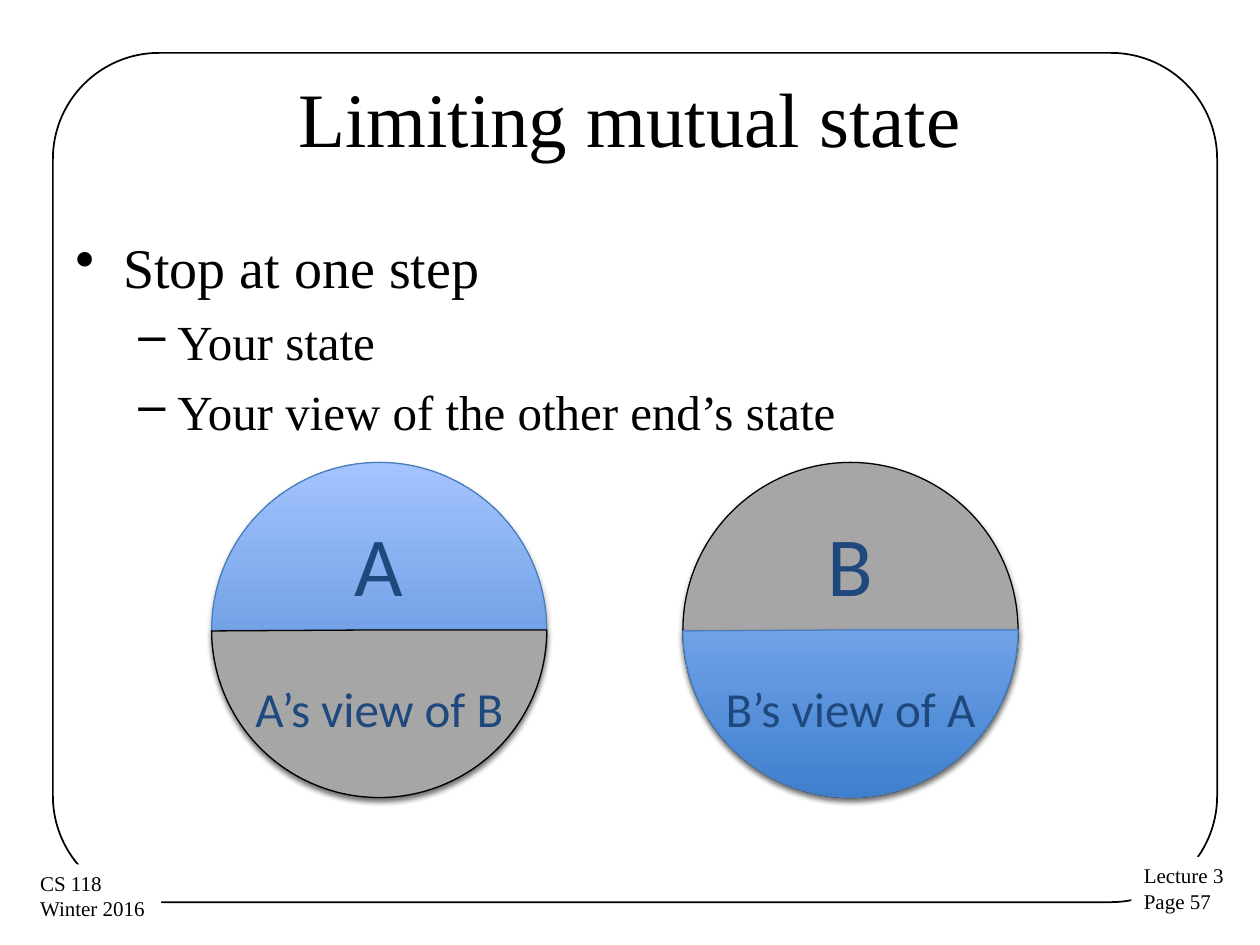
from dataclasses import dataclass

from lxml import etree
from pptx import Presentation
from pptx import util as u
from pptx.dml.color import RGBColor
from pptx.enum import shapes, text
from pptx.oxml import ns


@dataclass(frozen=True)
class Theme:
    """Colours, fonts and type sizes of the deck."""

    black: str = "000000"
    white: str = "FFFFFF"
    grey: str = "A6A6A6"
    navy: str = "1F497D"
    blue_line: str = "4B7EBC"
    blue_gradient: tuple = ("3F80CE", "A4C4FF")
    serif: str = "Times New Roman"
    sans: str = "Calibri"
    title: int = 44
    bullets: tuple = (32, 28)
    letter: int = 48
    view: int = 28
    footer: int = 12


class SlideBuilder:
    """Adds styled elements to the current slide."""

    def __init__(self, slide, theme):
        self.slide = slide
        self.theme = theme

    def format_font(self, paragraph, size, name, color):
        """Set the size, typeface and colour of a paragraph."""
        values = {"size": u.Pt(size), "name": name, "bold": False}
        for key, value in values.items():
            setattr(paragraph.font, key, value)
        paragraph.font.color.rgb = RGBColor.from_string(color)

    def format_frame(self, frame, **values):
        """Apply format values to a text frame."""
        for key, value in values.items():
            setattr(frame, key, value)

    def title(self, wording):
        """Place and format the title placeholder."""
        title = self.slide.shapes.title
        box = {"left": 0.5, "top": 0.3, "width": 9, "height": 1.25}
        for key, value in box.items():
            setattr(title, key, u.Inches(value))
        title.text_frame.text = wording
        self.format_frame(title.text_frame, vertical_anchor=text.MSO_ANCHOR.MIDDLE)
        paragraph = title.text_frame.paragraphs[0]
        paragraph.alignment = text.PP_ALIGN.CENTER
        self.format_font(paragraph, self.theme.title, self.theme.serif, self.theme.black)

    def shape(self, kind, box, fill=None, line=None, width=0.75):
        """Add a preset shape with a plain, gradient or empty fill."""
        shape = self.slide.shapes.add_shape(kind, *map(u.Inches, box))
        shape.shadow.inherit = False
        if fill is None:
            shape.fill.background()
        elif isinstance(fill, tuple):
            shape.fill.gradient()
            shape.fill.gradient_angle = 90
            for stop, color in zip(shape.fill.gradient_stops, fill):
                stop.color.rgb = RGBColor.from_string(color)
        else:
            shape.fill.solid()
            shape.fill.fore_color.rgb = RGBColor.from_string(fill)
        if line is None:
            shape.line.fill.background()
        else:
            shape.line.color.rgb = RGBColor.from_string(line)
            shape.line.width = u.Pt(width)
        return shape

    def frame(self, box):
        """Add the rounded frame around the slide."""
        frame = self.shape(
            shapes.MSO_SHAPE.ROUNDED_RECTANGLE, box, line=self.theme.black, width=1
        )
        frame.adjustments[0] = 0.125

    def footer(self, box, lines):
        """Add a white corner label."""
        label = self.shape(shapes.MSO_SHAPE.RECTANGLE, box, self.theme.white)
        label.text_frame.text = "\n".join(lines)
        self.format_frame(
            label.text_frame, word_wrap=False, vertical_anchor=text.MSO_ANCHOR.TOP
        )
        for paragraph in label.text_frame.paragraphs:
            paragraph.alignment = text.PP_ALIGN.LEFT
            self.format_font(
                paragraph, self.theme.footer, self.theme.serif, self.theme.black
            )

    def bullets(self, box, items):
        """Add a two-level bullet list."""
        frame = self.slide.shapes.add_textbox(*map(u.Inches, box)).text_frame
        frame.word_wrap = True
        frame.text = "\n".join(wording for _, wording in items)
        styles = (("•", 0.38, 0.38), ("–", 0.81, 0.31))
        for index, (level, _) in enumerate(items):
            paragraph = frame.paragraphs[index]
            mark, margin, hanging = styles[level]
            paragraph.level = level
            paragraph.space_before = u.Pt(6.5 if index else 0)
            properties = paragraph._p.get_or_add_pPr()
            properties.set("marL", str(u.Inches(margin)))
            properties.set("indent", str(-u.Inches(hanging)))
            etree.SubElement(properties, ns.qn("a:buChar")).set("char", mark)
            self.format_font(
                paragraph, self.theme.bullets[level], self.theme.serif, self.theme.black
            )

    def drop_shadow(self, shape):
        """Give a shape a soft shadow below it."""
        effects = shape._element.spPr.find(ns.qn("a:effectLst"))
        shadow = etree.SubElement(effects, ns.qn("a:outerShdw"))
        values = {"blurRad": "40000", "dist": "23000", "dir": "5400000", "rotWithShape": "0"}
        for key, value in values.items():
            shadow.set(key, value)
        color = etree.SubElement(shadow, ns.qn("a:srgbClr"))
        color.set("val", self.theme.black)
        etree.SubElement(color, ns.qn("a:alpha")).set("val", "35000")

    def state_part(self, kind, box, fill, line, wording, size, margins):
        """Add a circle or half circle with its label."""
        part = self.shape(kind, box, fill, line)
        self.drop_shadow(part)
        top, bottom = margins
        self.format_frame(
            part.text_frame,
            text=wording,
            word_wrap=False,
            vertical_anchor=text.MSO_ANCHOR.MIDDLE,
            margin_top=u.Inches(top),
            margin_bottom=u.Inches(bottom),
        )
        paragraph = part.text_frame.paragraphs[0]
        paragraph.alignment = text.PP_ALIGN.CENTER
        self.format_font(paragraph, size, self.theme.sans, self.theme.navy)
        return part

    def endpoint(self, left, name, other, own_style, view_style):
        """Add one end with its own state above its view of the other."""
        box = (left, 3.67, 2.66, 2.66)
        self.state_part(
            shapes.MSO_SHAPE.OVAL, box, *own_style, name, self.theme.letter, (0, 1.06)
        )
        view = self.state_part(
            shapes.MSO_SHAPE.PIE,
            box,
            *view_style,
            f"{name}’s view of {other}",
            self.theme.view,
            (1.24, 0),
        )
        view.adjustments[0] = 0
        view.adjustments[1] = 107.8


def main():
    """Build and save the slide."""
    presentation = Presentation()
    presentation.slide_width = u.Inches(10)
    presentation.slide_height = u.Inches(7.5)
    slide = presentation.slides.add_slide(presentation.slide_layouts[5])
    theme = Theme()
    builder = SlideBuilder(slide, theme)
    builder.frame((0.42, 0.42, 9.24, 6.74))
    builder.footer((8.98, 6.8, 0.84, 0.51), ("Lecture 3", "Page 57"))
    builder.footer((0.22, 6.86, 1.06, 0.51), ("CS 118", "Winter 2016"))
    builder.title("Limiting mutual state")
    builder.bullets(
        (0.5, 1.8, 9, 1.8),
        (
            (0, "Stop at one step"),
            (1, "Your state"),
            (1, "Your view of the other end’s state"),
        ),
    )
    blue = (theme.blue_gradient, theme.blue_line)
    grey = (theme.grey, theme.black)
    builder.endpoint(1.68, "A", "B", blue, grey)
    builder.endpoint(5.42, "B", "A", grey, blue)
    presentation.save("out.pptx")


if __name__ == "__main__":
    main()
